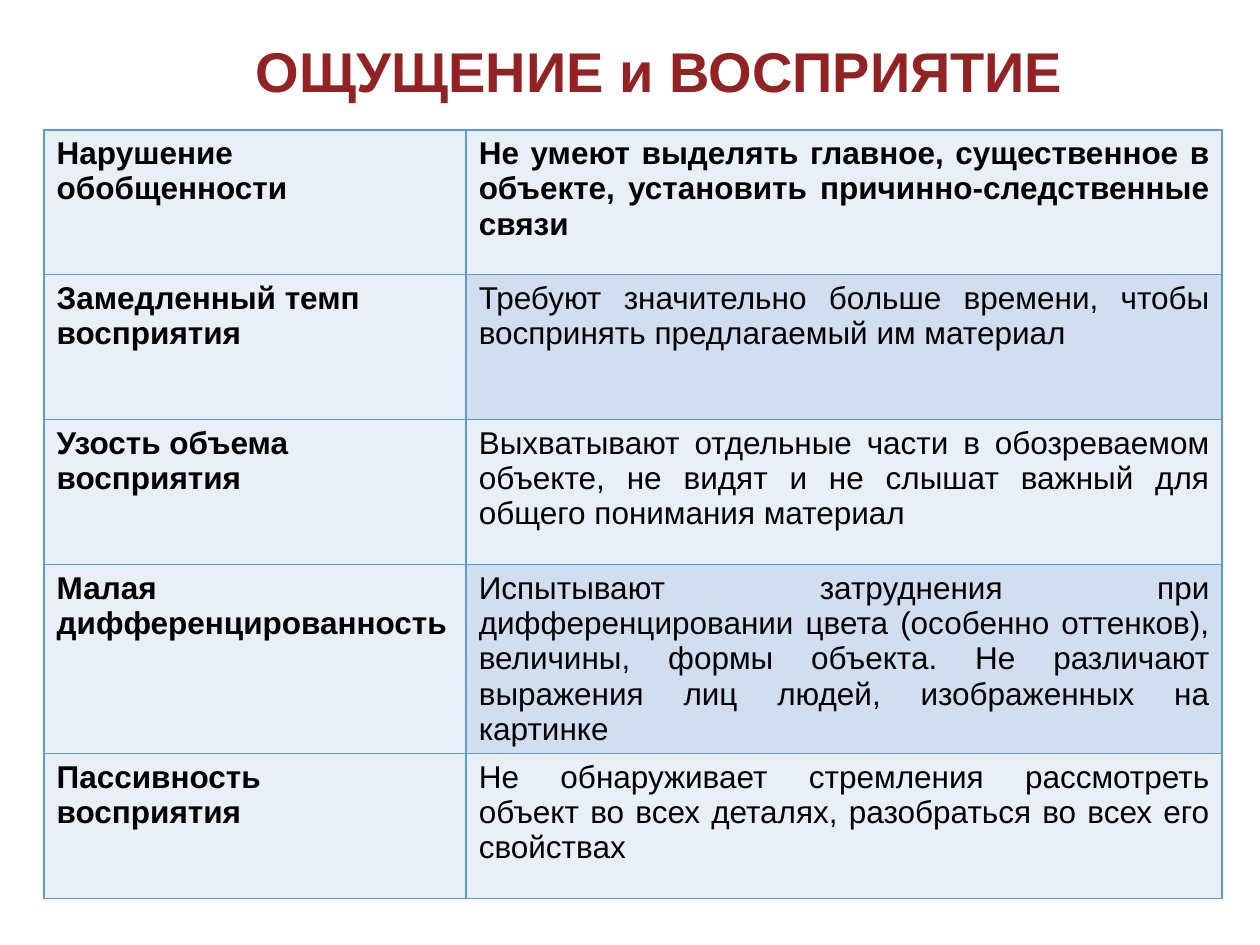
from lxml.etree import SubElement
from pptx import Presentation
from pptx.dml.color import RGBColor
from pptx.enum.text import MSO_ANCHOR, PP_ALIGN
from pptx.oxml.ns import qn
from pptx.util import Inches, Pt

FONT = "Arial"
BLACK = "000000"
TITLE_RED = "922223"
BORDER_BLUE = "5B9BD5"
PALE_BLUE = "E9EFF7"
BAND_BLUE = "D1DEEF"

FEATURES = [
    ("Нарушение обобщенности",
     "Не умеют выделять главное, существенное в объекте, "
     "установить причинно-следственные связи"),
    ("Замедленный темп восприятия",
     "Требуют значительно больше времени, чтобы воспринять "
     "предлагаемый им материал"),
    ("Узость объема восприятия",
     "Выхватывают отдельные части в обозреваемом объекте, не видят "
     "и не слышат важный для общего понимания материал"),
    ("Малая дифференцированность",
     "Испытывают затруднения при дифференцировании цвета (особенно "
     "оттенков), величины, формы объекта. Не различают выражения лиц "
     "людей, изображенных на картинке"),
    ("Пассивность восприятия",
     "Не обнаруживает стремления рассмотреть объект во всех деталях, "
     "разобраться во всех его свойствах"),
]


def rgb(color):
    return RGBColor.from_string(color)


def format_paragraph(paragraph, size, color, bold, alignment):
    paragraph.alignment = alignment
    font = paragraph.font
    font.name = FONT
    font.size = Pt(size)
    font.bold = bold
    font.color.rgb = rgb(color)


def set_title(slide, text):
    title = slide.shapes.title
    title.left, title.top = Inches(1.09), Inches(0.09)
    title.width, title.height = Inches(8.29), Inches(0.94)
    frame = title.text_frame
    frame.text = text
    frame.word_wrap = True
    frame.vertical_anchor = MSO_ANCHOR.MIDDLE
    format_paragraph(frame.paragraphs[0], 32, TITLE_RED, True, PP_ALIGN.CENTER)


def add_borders(cell, color, width):
    properties = cell._tc.get_or_add_tcPr()
    for position, side in enumerate(("a:lnL", "a:lnR", "a:lnT", "a:lnB")):
        line = SubElement(properties, qn(side), w=str(Pt(width)))
        fill = SubElement(line, qn("a:solidFill"))
        SubElement(fill, qn("a:srgbClr"), val=color)
        properties.insert(position, line)


def fill_cell(cell, text, color, bold, alignment):
    cell.text = text
    cell.fill.solid()
    cell.fill.fore_color.rgb = rgb(color)
    format_paragraph(cell.text_frame.paragraphs[0], 18, BLACK, bold, alignment)
    add_borders(cell, BORDER_BLUE, 0.96)


def add_feature_table(slide, features):
    row_height = Inches(1.15)
    frame = slide.shapes.add_table(
        len(features), 2, Inches(0.35), Inches(1.03),
        Inches(9.35), row_height * len(features))
    table = frame.table
    table.columns[0].width = Inches(3.35)
    table.columns[1].width = Inches(6)
    for index, (feature, description) in enumerate(features):
        band = BAND_BLUE if index % 2 else PALE_BLUE
        fill_cell(table.cell(index, 0), feature, PALE_BLUE, True, PP_ALIGN.LEFT)
        fill_cell(table.cell(index, 1), description, band, index == 0,
                  PP_ALIGN.JUSTIFY)


def main():
    presentation = Presentation()
    presentation.slide_width = Inches(10)
    presentation.slide_height = Inches(7.5)
    slide = presentation.slides.add_slide(presentation.slide_layouts[5])
    set_title(slide, "ОЩУЩЕНИЕ и ВОСПРИЯТИЕ")
    add_feature_table(slide, FEATURES)
    presentation.save("out.pptx")


if __name__ == "__main__":
    main()
